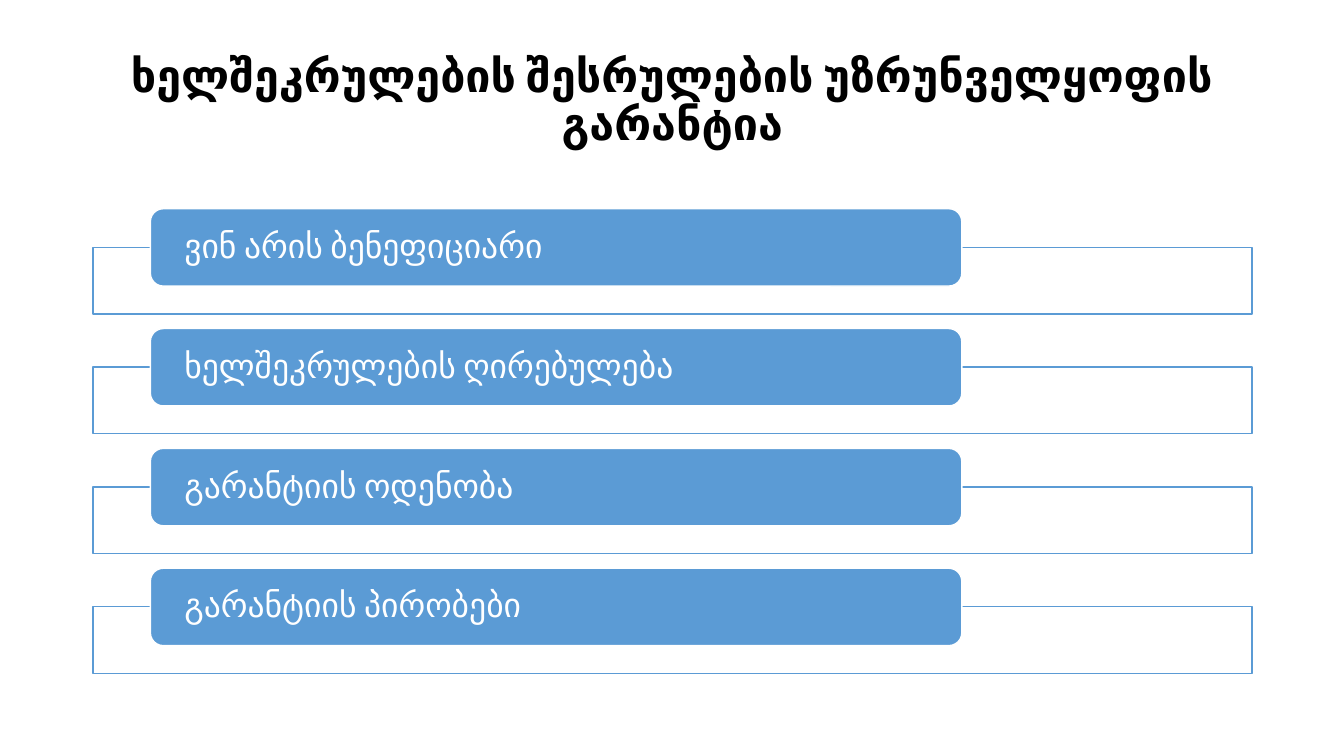
from lxml.etree import SubElement
from pptx import Presentation
from pptx.dml.color import RGBColor
from pptx.enum.shapes import MSO_SHAPE
from pptx.enum.text import MSO_ANCHOR, PP_ALIGN
from pptx.oxml.ns import qn
from pptx.util import Cm, Pt

TITLE = "ხელშეკრულების შესრულების უზრუნველყოფის გარანტია"
ITEMS = [
    "ვინ არის ბენეფიციარი",
    "ხელშეკრულების ღირებულება",
    "გარანტიის ოდენობა",
    "გარანტიის პირობები",
]

BLUE = RGBColor(0x5B, 0x9B, 0xD5)
WHITE = RGBColor(0xFF, 0xFF, 0xFF)
BLACK = RGBColor(0, 0, 0)

LEFT, WIDTH = 2.34, 29.21
TOP, STEP = 5.26, 3.02
DROP = 0.97  # from the top of a pill to the top of its frame
INDENT = 1.45

HEAD = {"name": "Calibri", "size": Pt(32), "bold": True}
LABEL = {"name": "Calibri", "size": Pt(24), "bold": False}


def write(shape, text, color, look, align):
    frame = shape.text_frame
    frame.text = text
    frame.word_wrap = True
    frame.vertical_anchor = MSO_ANCHOR.MIDDLE
    para = frame.paragraphs[0]
    para.alignment = align
    para.line_spacing = 0.9
    font = para.runs[0].font
    font.color.rgb = color
    for key, value in look.items():
        setattr(font, key, value)


def draw(slide, kind, box, fill, line):
    shape = slide.shapes.add_shape(kind, *map(Cm, box))
    shape.shadow.inherit = False
    shape.fill.solid()
    shape.fill.fore_color.rgb = fill
    shape.line.color.rgb = line
    shape.line.width = Pt(1)
    return shape


def fade(shape, share):
    """Set the opacity of a solid fill, in percent."""
    color = shape.fill._xPr.find(qn("a:solidFill"))[0]
    SubElement(color, qn("a:alpha")).set("val", str(share * 1000))


def main():
    deck = Presentation()
    deck.slide_width, deck.slide_height = Cm(33.87), Cm(19.05)
    slide = deck.slides.add_slide(deck.slide_layouts[5])

    title = slide.shapes.title
    title.left, title.top = Cm(LEFT), Cm(1.02)
    title.width, title.height = Cm(WIDTH), Cm(3.1)
    write(title, TITLE, BLACK, HEAD, PP_ALIGN.CENTER)

    for row, text in enumerate(ITEMS):
        top = TOP + row * STEP
        bar = draw(slide, MSO_SHAPE.RECTANGLE,
                   (LEFT, top + DROP, WIDTH, 1.68), WHITE, BLUE)
        fade(bar, 90)
        pill = draw(slide, MSO_SHAPE.ROUNDED_RECTANGLE,
                    (LEFT + INDENT, top, 20.45, 1.95), BLUE, WHITE)
        write(pill, text, WHITE, LABEL, PP_ALIGN.LEFT)
        frame = pill.text_frame
        frame.margin_left = frame.margin_right = Cm(0.76)
        frame.margin_top = frame.margin_bottom = 0

    deck.save("out.pptx")


if __name__ == "__main__":
    main()
